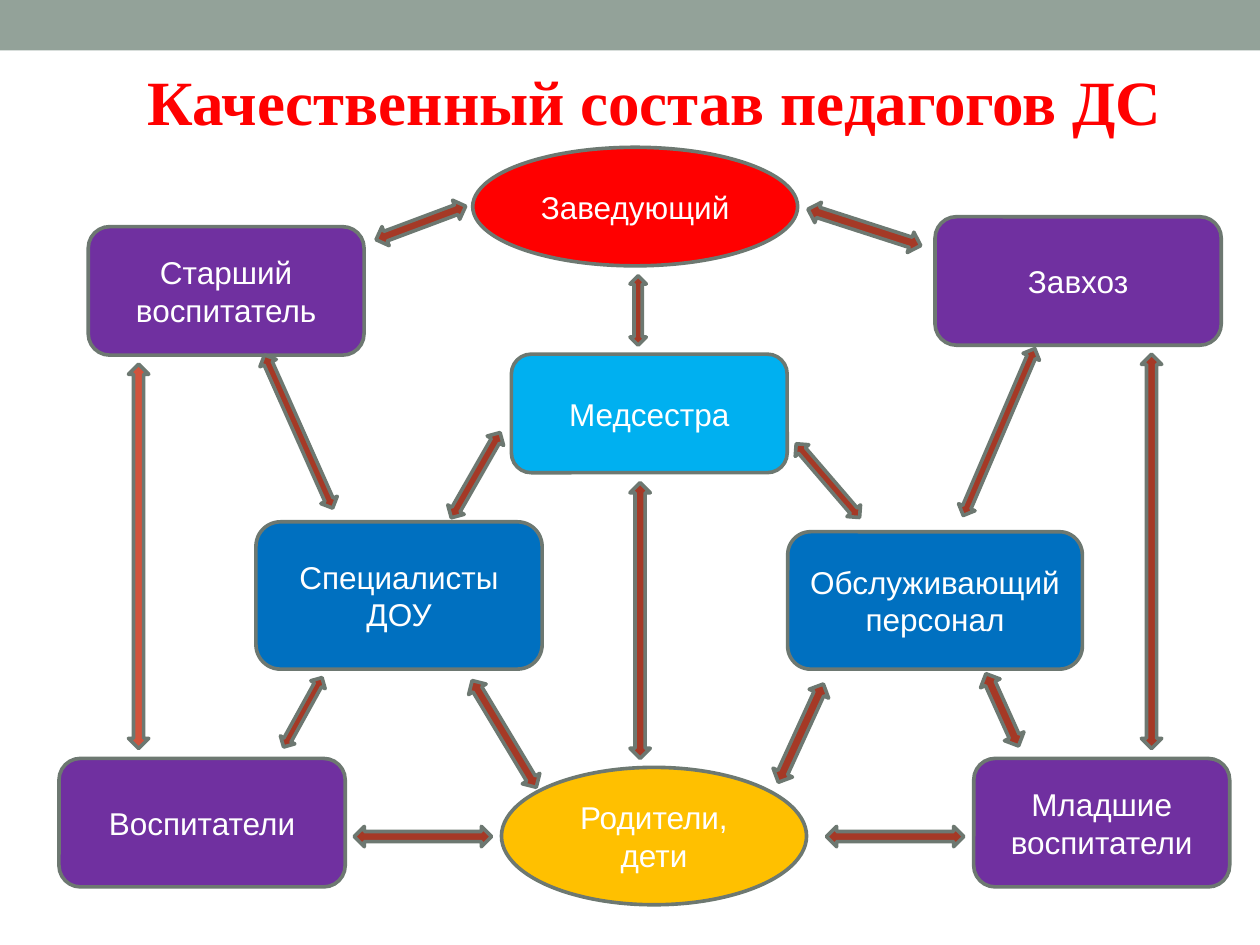
from pptx import Presentation
from pptx.dml.color import RGBColor
from pptx.enum import shapes, text
from pptx.util import Cm, Pt

KIND = shapes.MSO_SHAPE
OVAL, ROUND = KIND.OVAL, KIND.ROUNDED_RECTANGLE
TALL, WIDE = KIND.UP_DOWN_ARROW, KIND.LEFT_RIGHT_ARROW
EDGE, RUST, PLUM, BLUE = "6D7871", "A53926", "7030A0", "0070C0"

ROLES = [
    ("Заведующий", OVAL, "FF0000", (9.53, 2.97, 6.55, 2.39)),
    ("Старший воспитатель", ROUND, PLUM, (1.78, 4.57, 5.56, 2.59)),
    ("Завхоз", ROUND, PLUM, (18.85, 4.37, 5.77, 2.59)),
    ("Медсестра", ROUND, "00B0F0", (10.31, 7.14, 5.56, 2.39)),
    ("Специалисты ДОУ", ROUND, BLUE, (5.16, 10.52, 5.77, 2.97)),
    ("Обслуживающий персонал", ROUND, BLUE, (15.88, 10.72, 5.94, 2.77)),
    ("Родители, дети", OVAL, "FFC000", (10.11, 15.47, 6.15, 2.77)),
    ("Воспитатели", ROUND, PLUM, (1.19, 15.29, 5.77, 2.59)),
    ("Младшие воспитатели", ROUND, PLUM, (19.63, 15.29, 5.16, 2.59)),
]

LINKS = [
    (TALL, (2.59, 7.34, 0.41, 7.75), 0, "D2533C"),
    (TALL, (5.84, 7.01, 0.36, 3.38), -24, RUST),
    (TALL, (12.7, 5.56, 0.33, 1.4), 0, RUST),
    (TALL, (19.96, 6.88, 0.36, 3.66), 23.2, RUST),
    (TALL, (12.7, 9.73, 0.41, 5.56), 0, RUST),
    (TALL, (5.94, 13.56, 0.33, 1.6), 28.9, RUST),
    (TALL, (19.99, 13.51, 0.43, 1.6), -24.3, RUST),
    (TALL, (23.01, 7.14, 0.41, 7.95), 0, RUST),
    (WIDE, (7.14, 16.66, 2.77, 0.41), 0, RUST),
    (WIDE, (16.66, 16.66, 2.77, 0.41), 0, RUST),
    (TALL, (9.96, 13.54, 0.41, 2.51), -31, RUST),
    (TALL, (15.93, 13.69, 0.43, 2.18), 24.6, RUST),
    (WIDE, (7.52, 4.29, 1.93, 0.41), -20.5, RUST),
    (WIDE, (16.23, 4.37, 2.39, 0.43), 17.9, RUST),
    (TALL, (9.4, 8.59, 0.38, 1.98), 29.8, RUST),
    (TALL, (16.51, 8.71, 0.36, 1.96), -40.7, RUST),
]


def tint(code):
    """Turn a hex string into a colour."""
    return RGBColor.from_string(code)


def write(shape, words, size=18, face="Arial", color="FFFFFF", bold=False):
    """Put centred, formatted text into a shape."""
    frame = shape.text_frame
    frame.word_wrap = True
    frame.vertical_anchor = text.MSO_ANCHOR.MIDDLE
    frame.text = words
    para = frame.paragraphs[0]
    para.alignment = text.PP_ALIGN.CENTER
    font = para.runs[0].font
    font.size, font.name, font.bold = Pt(size), face, bold
    font.color.rgb = tint(color)


def draw(slide, kind, box, fill, edge=EDGE, turn=0):
    """Add a filled preset shape, outlined and turned as asked."""
    shape = slide.shapes.add_shape(kind, *map(Cm, box))
    shape.shadow.inherit = False
    shape.fill.solid()
    shape.fill.fore_color.rgb = tint(fill)
    shape.rotation = turn
    if edge:
        shape.line.color.rgb = tint(edge)
        shape.line.width = Pt(2.08)
    else:
        shape.line.fill.background()
    return shape


def head(slide, words):
    """Place and format the slide title."""
    title = slide.shapes.title
    title.left, title.top, title.width, title.height = map(Cm, (2.31, 1.12, 21.79, 1.8))
    write(title, words, size=36, face="Times New Roman", color="FF0000", bold=True)
    title.text_frame.auto_size = text.MSO_AUTO_SIZE.NONE


def main():
    """Build the staff chart and save it."""
    deck = Presentation()
    deck.slide_width, deck.slide_height = Cm(25.4), Cm(19.05)
    slide = deck.slides.add_slide(deck.slide_layouts[5])
    draw(slide, KIND.RECTANGLE, (0, 0, 25.4, 1.02), "93A299", edge=None)
    head(slide, "Качественный состав педагогов ДС")
    for words, kind, fill, box in ROLES:
        write(draw(slide, kind, box, fill), words)
    for kind, box, turn, fill in LINKS:
        draw(slide, kind, box, fill, turn=turn)
    deck.save("out.pptx")


if __name__ == "__main__":
    main()
